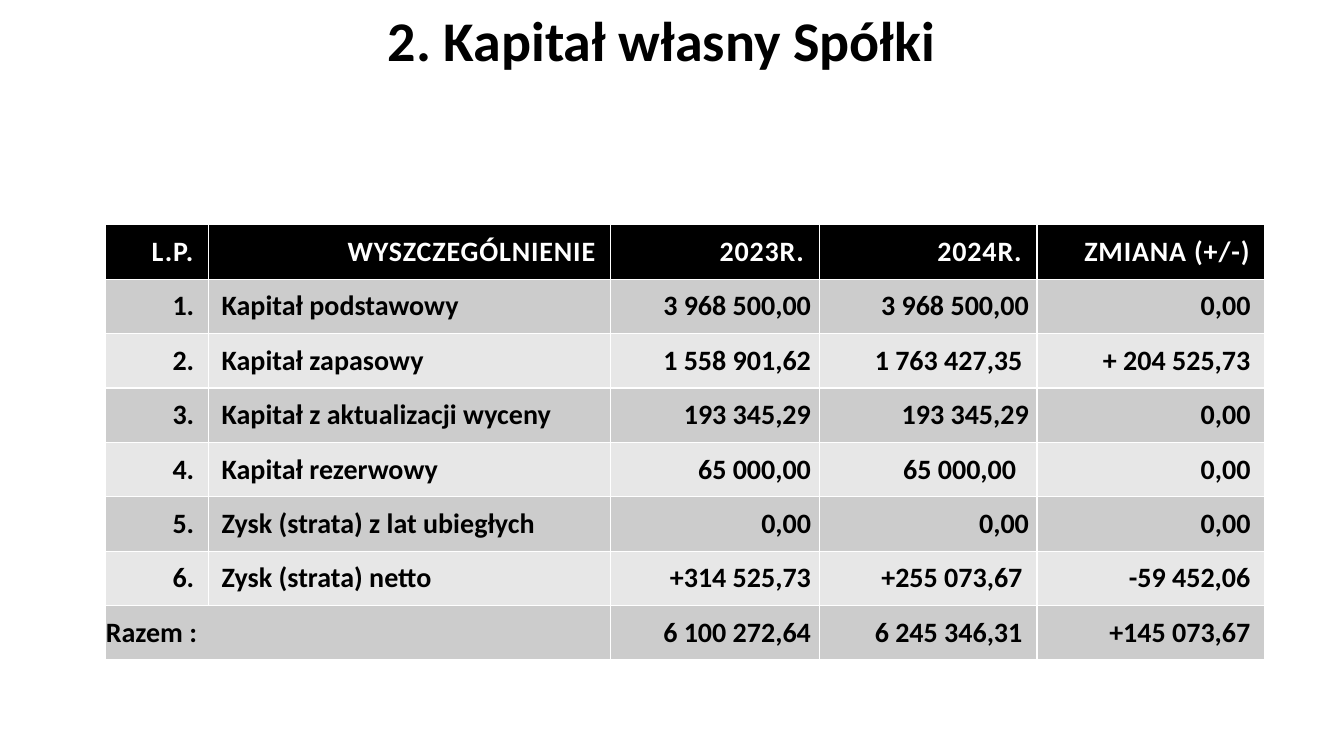
"""Build the slide with the table of the company's equity."""
from dataclasses import dataclass

from lxml import etree
from pptx import Presentation
from pptx.dml.color import RGBColor
from pptx.enum.text import MSO_ANCHOR, MSO_AUTO_SIZE, PP_ALIGN
from pptx.oxml.ns import qn
from pptx.util import Pt

MIDDLE = MSO_ANCHOR.MIDDLE
LEFT, CENTER, RIGHT = PP_ALIGN.LEFT, PP_ALIGN.CENTER, PP_ALIGN.RIGHT
NO_AUTOFIT = MSO_AUTO_SIZE.NONE


@dataclass(frozen=True)
class Theme:
    font: str = "Calibri"
    ink: str = "000000"
    paper: str = "FFFFFF"
    bands: tuple[str, str] = ("CCCCCC", "E7E7E7")
    title_size: float = 40
    table_size: float = 20
    header_spacing: float = 0.6
    border_width: float = 1


@dataclass(frozen=True)
class Column:
    heading: str
    width: float
    align: PP_ALIGN = RIGHT


@dataclass(frozen=True)
class EquityItem:
    name: str
    year_2023: str
    year_2024: str
    change: str


THEME = Theme()
TABLE_LEFT, TABLE_TOP, ROW_HEIGHT = 75.6, 160.5, 38.88
CELL_MARGINS = (9.36, 5.76, 5.76, 5.76)
NO_MARGINS = (0, 0, 0, 0)

COLUMNS = [
    Column("L.P. ", 73.4),
    Column("WYSZCZEGÓLNIENIE ", 287.2, LEFT),
    Column("2023R. ", 149),
    Column("2024R. ", 155.6),
    Column("ZMIANA (+/-) ", 162.8),
]
ITEMS = [
    EquityItem("Kapitał podstawowy ", "3 968 500,00", "3 968 500,00", "0,00 "),
    EquityItem("Kapitał zapasowy ", "1 558 901,62", "1 763 427,35 ", "+ 204 525,73 "),
    EquityItem("Kapitał z aktualizacji wyceny ", "193 345,29", "193 345,29", "0,00 "),
    EquityItem("Kapitał rezerwowy ", "65 000,00", "65 000,00  ", "0,00 "),
    EquityItem("Zysk (strata) z lat ubiegłych ", "0,00", "0,00", "0,00 "),
    EquityItem("Zysk (strata) netto ", "+314 525,73", "+255 073,67 ", "-59 452,06 "),
]
TOTAL = EquityItem("Razem : ", "6 100 272,64", "6 245 346,31 ", "+145 073,67 ")


def write_text(frame, text: str, *, size: float, color: str = THEME.ink,
               align: PP_ALIGN = LEFT, spacing: float = 0, line_spacing: float = 1) -> None:
    """Write one bold paragraph into a text frame."""
    paragraph = frame.paragraphs[0]
    paragraph.alignment = align
    paragraph.line_spacing = line_spacing
    run = paragraph.add_run()
    run.text = text
    run.font.name = THEME.font
    run.font.size = Pt(size)
    run.font.bold = True
    run.font.color.rgb = RGBColor.from_string(color)
    if spacing:
        run.font._element.set("spc", str(round(spacing * 100)))


def style_cell(cell, fill: str, margins: tuple[float, ...] = CELL_MARGINS) -> None:
    """Set a cell's fill, margins, anchor and borders."""
    cell.fill.solid()
    cell.fill.fore_color.rgb = RGBColor.from_string(fill)
    cell.vertical_anchor = MIDDLE
    (cell.margin_left, cell.margin_top,
     cell.margin_right, cell.margin_bottom) = map(Pt, margins)
    properties = cell._tc.get_or_add_tcPr()
    for position, side in enumerate(("a:lnL", "a:lnR", "a:lnT", "a:lnB")):
        border = etree.Element(qn(side), w=str(Pt(THEME.border_width)))
        solid = etree.SubElement(border, qn("a:solidFill"))
        etree.SubElement(solid, qn("a:srgbClr"), val=THEME.paper)
        properties.insert(position, border)


def add_title(slide, text: str) -> None:
    """Place and format the title placeholder."""
    title = slide.shapes.title
    title.left, title.top, title.width, title.height = Pt(-2.9), Pt(0), Pt(960), Pt(62.6)
    title.text_frame.auto_size = NO_AUTOFIT
    title.text_frame.vertical_anchor = MIDDLE
    write_text(title.text_frame, text, size=THEME.title_size, align=CENTER, line_spacing=0.9)


def add_equity_table(slide) -> None:
    """Add the header, the numbered items and the total."""
    row_count = len(ITEMS) + 2
    table = slide.shapes.add_table(
        row_count, len(COLUMNS), Pt(TABLE_LEFT), Pt(TABLE_TOP),
        Pt(sum(column.width for column in COLUMNS)), Pt(ROW_HEIGHT * row_count)).table
    for row in table.rows:
        row.height = Pt(ROW_HEIGHT)
    for index, column in enumerate(COLUMNS):
        table.columns[index].width = Pt(column.width)
        heading = table.cell(0, index)
        style_cell(heading, THEME.ink)
        write_text(heading.text_frame, column.heading, size=THEME.table_size,
                   color=THEME.paper, align=RIGHT, spacing=THEME.header_spacing)

    for number, item in enumerate([*ITEMS, TOTAL], start=1):
        is_total = item is TOTAL
        label = (item.name, "") if is_total else (f"{number}. ", item.name)
        values = (*label, item.year_2023, item.year_2024, item.change)
        for index, (column, value) in enumerate(zip(COLUMNS, values)):
            cell = table.cell(number, index)
            is_total_label = is_total and index < len(label)
            style_cell(cell, THEME.bands[(number - 1) % 2],
                       NO_MARGINS if is_total_label else CELL_MARGINS)
            if value:
                write_text(cell.text_frame, value, size=THEME.table_size,
                           align=LEFT if is_total_label else column.align)
    table.cell(row_count - 1, 0).merge(table.cell(row_count - 1, 1))


def main() -> None:
    """Create and save the presentation."""
    presentation = Presentation()
    presentation.slide_width, presentation.slide_height = Pt(960), Pt(540)
    slide = presentation.slides.add_slide(presentation.slide_layouts[5])
    add_title(slide, "2. Kapitał własny Spółki ")
    add_equity_table(slide)
    presentation.save("out.pptx")


if __name__ == "__main__":
    main()
